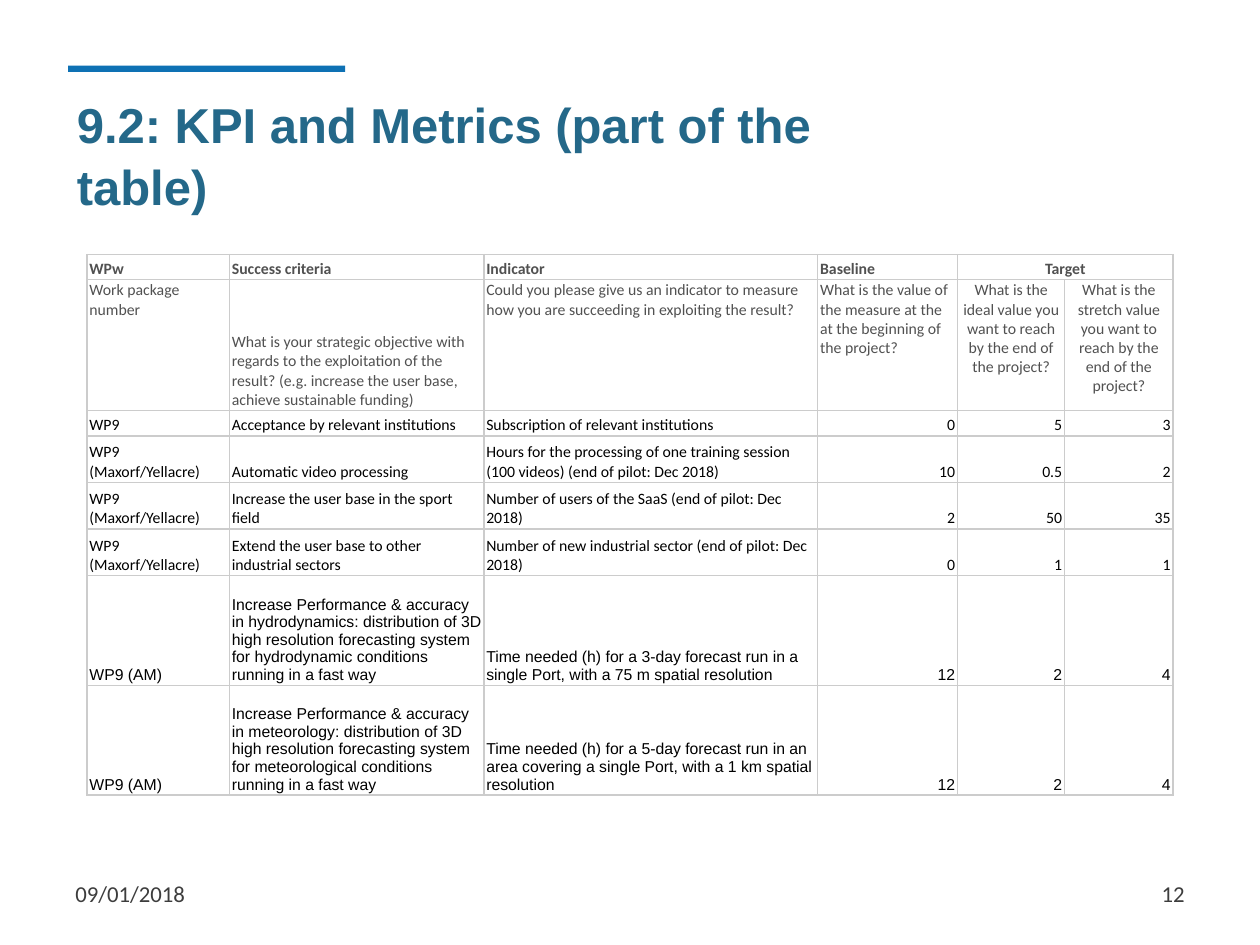
from lxml.etree import SubElement
from pptx import Presentation
from pptx.dml.color import RGBColor
from pptx.enum.shapes import MSO_SHAPE as SHAPE
from pptx.enum.text import MSO_ANCHOR as ANCHOR, PP_ALIGN as ALIGN
from pptx.oxml.ns import qn
from pptx.util import Inches, Pt

BLUE = RGBColor(0x0E, 0x71, 0xB4)
TITLE_BLUE = RGBColor(0x24, 0x68, 0x89)
FOOTER_GREY = RGBColor(0x3D, 0x3D, 0x3D)
HEADER_GREY = RGBColor(0x51, 0x51, 0x51)
BLACK = RGBColor(0, 0, 0)
BORDER = RGBColor(0xCC, 0xCC, 0xCC)

# Table grid, in inches
COLS = [1.13, 2.02, 2.65, 1.11, 0.85, 0.86]
ROWS = [0.2, 1.04, 0.2, 0.37, 0.37, 0.37, 0.87, 0.87]
TABLE_AT = (0.69, 2.02)

PARTNERS = "WP9 (Maxorf/Yellacre)"
HEADINGS = ["WPw", "Success criteria", "Indicator", "Baseline", "Target", ""]
QUESTIONS = [
    "Work package number",
    "What is your strategic objective with regards to the exploitation of the "
    "result? (e.g. increase the user base, achieve sustainable funding)",
    "Could you please give us an indicator to measure how you are succeeding "
    "in exploiting the result?",
    "What is the value of the measure at the at the beginning of the project?",
    "What is the ideal value you want to reach by the end of the project?",
    "What is the stretch value you want to reach by the end of the project?",
]
KPIS = [
    ["WP9", "Acceptance by relevant institutions",
     "Subscription of relevant institutions", "0", "5", "3"],
    [PARTNERS, "Automatic video processing",
     "Hours for the processing of one training session (100 videos) "
     "(end of pilot: Dec 2018)", "10", "0.5", "2"],
    [PARTNERS, "Increase the user base in the sport field",
     "Number of users of the SaaS (end of pilot: Dec 2018)", "2", "50", "35"],
    [PARTNERS, "Extend the user base to other industrial sectors",
     "Number of new industrial sector (end of pilot: Dec 2018)", "0", "1", "1"],
    ["WP9 (AM)",
     "Increase Performance & accuracy in hydrodynamics: distribution of 3D high "
     "resolution forecasting system for hydrodynamic conditions running in a fast way",
     "Time needed (h) for a 3-day forecast run in a single Port, with a 75 m "
     "spatial resolution", "12", "2", "4"],
    ["WP9 (AM)",
     "Increase Performance & accuracy in meteorology: distribution of 3D high "
     "resolution forecasting system for meteorological conditions running in a fast way",
     "Time needed (h) for a 5-day forecast run in an area covering a single Port, "
     "with a 1 km spatial resolution", "12", "2", "4"],
]


def write(tf, text, align=ALIGN.LEFT, **font):
    """Fill a text frame with one formatted paragraph."""
    tf.word_wrap = True
    p = tf.paragraphs[0]
    p.alignment = align
    r = p.add_run()
    r.text = text
    for name, value in font.items():
        if name == "color":
            r.font.color.rgb = value
        else:
            setattr(r.font, name, value)
    return p


def add_bar(slide, *box):
    sp = slide.shapes.add_shape(SHAPE.RECTANGLE, *map(Inches, box))
    sp.shadow.inherit = False
    sp.fill.solid()
    sp.fill.fore_color.rgb = BLUE
    sp.line.fill.background()


def set_title(slide, text, *box):
    sp = slide.shapes.title
    sp.left, sp.top, sp.width, sp.height = map(Inches, box)
    sp.text_frame.vertical_anchor = ANCHOR.TOP
    p = write(sp.text_frame, text, name="Arial", size=Pt(28), bold=True,
              color=TITLE_BLUE)
    p.line_spacing = 1.05


def add_footer(slide, text, left, align):
    tf = slide.shapes.add_textbox(*map(Inches, (left, 6.89, 2.33, 0.4))).text_frame
    tf.vertical_anchor = ANCHOR.MIDDLE
    write(tf, text, align, name="Calibri", size=Pt(13), color=FOOTER_GREY)


def set_borders(cell):
    tc_pr = cell._tc.get_or_add_tcPr()
    for side in ("a:lnL", "a:lnR", "a:lnT", "a:lnB"):
        ln = SubElement(tc_pr, qn(side), w=str(Pt(1)))
        fill = SubElement(ln, qn("a:solidFill"))
        SubElement(fill, qn("a:srgbClr"), val=str(BORDER))


def cell_format(row, col):
    """Return anchor, alignment and font for a table position."""
    header = row < 2
    anchor = ANCHOR.TOP if row == 1 and col != 1 else ANCHOR.BOTTOM
    align = ALIGN.LEFT
    if header and col > 3:
        align = ALIGN.CENTER
    elif not header and col > 2:
        align = ALIGN.RIGHT
    font = {"name": "Arial" if row > 5 else "Calibri", "size": Pt(9),
            "bold": row == 0, "color": HEADER_GREY if header else BLACK}
    return anchor, align, font


def add_kpi_table(slide, data):
    box = (*TABLE_AT, sum(COLS), sum(ROWS))
    table = slide.shapes.add_table(len(ROWS), len(COLS), *map(Inches, box)).table
    table.first_row = table.horz_banding = False
    for column, width in zip(table.columns, COLS):
        column.width = Inches(width)
    for row, height in zip(table.rows, ROWS):
        row.height = Inches(height)
    table.cell(0, 4).merge(table.cell(0, 5))
    for i, texts in enumerate(data):
        for j, text in enumerate(texts):
            cell = table.cell(i, j)
            set_borders(cell)
            cell.fill.background()
            cell.margin_left = cell.margin_right = Inches(0.02)
            cell.margin_top = cell.margin_bottom = Inches(0.01)
            if cell.is_spanned:
                continue
            cell.vertical_anchor, align, font = cell_format(i, j)
            write(cell.text_frame, text, align, **font)


def main():
    prs = Presentation()
    prs.slide_width, prs.slide_height = Inches(10), Inches(7.5)
    slide = prs.slides.add_slide(prs.slide_layouts[5])

    # Heading
    add_bar(slide, 0.54, 0.52, 2.2, 0.05)
    set_title(slide, "9.2: KPI and Metrics (part of the table)",
              0.51, 0.68, 7.09, 0.63)

    # Table
    add_kpi_table(slide, [HEADINGS, QUESTIONS, *KPIS])

    # Footer
    add_footer(slide, "09/01/2018", 0.5, ALIGN.LEFT)
    add_footer(slide, "12", 7.17, ALIGN.RIGHT)
    prs.save("out.pptx")


if __name__ == "__main__":
    main()
